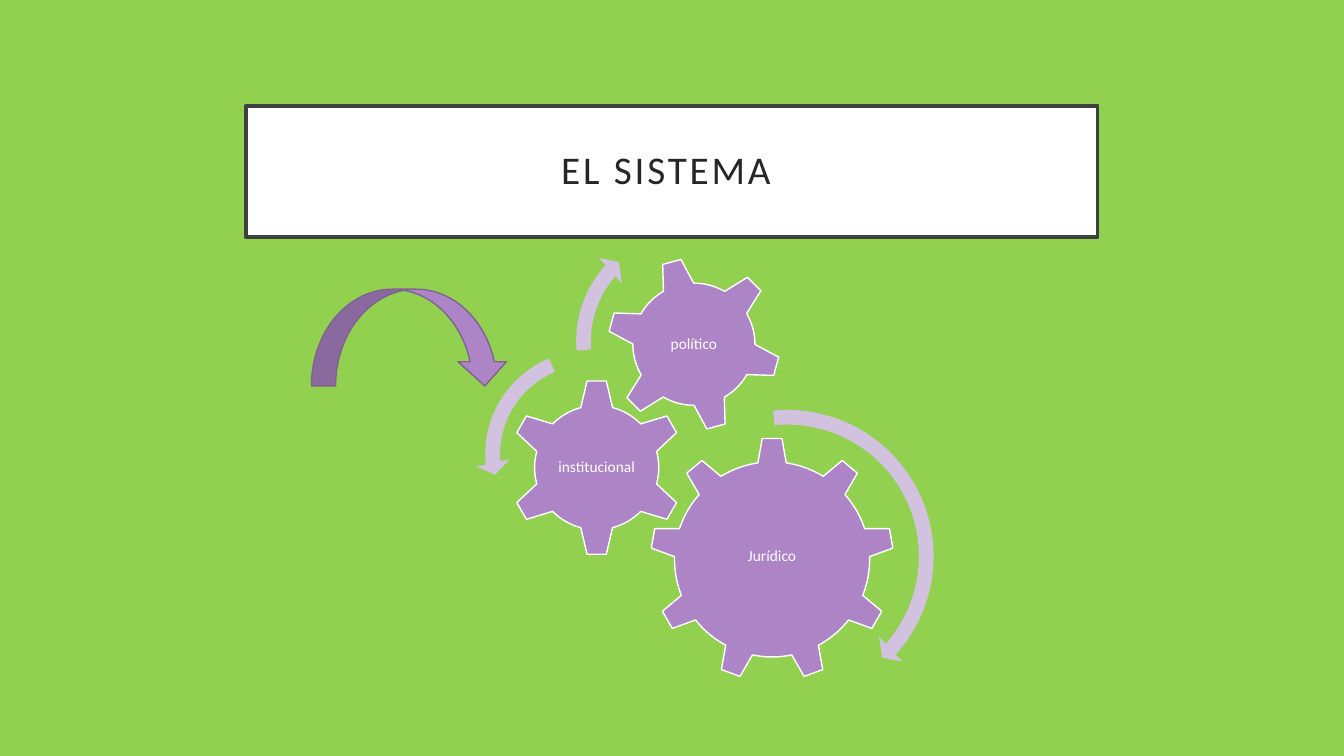
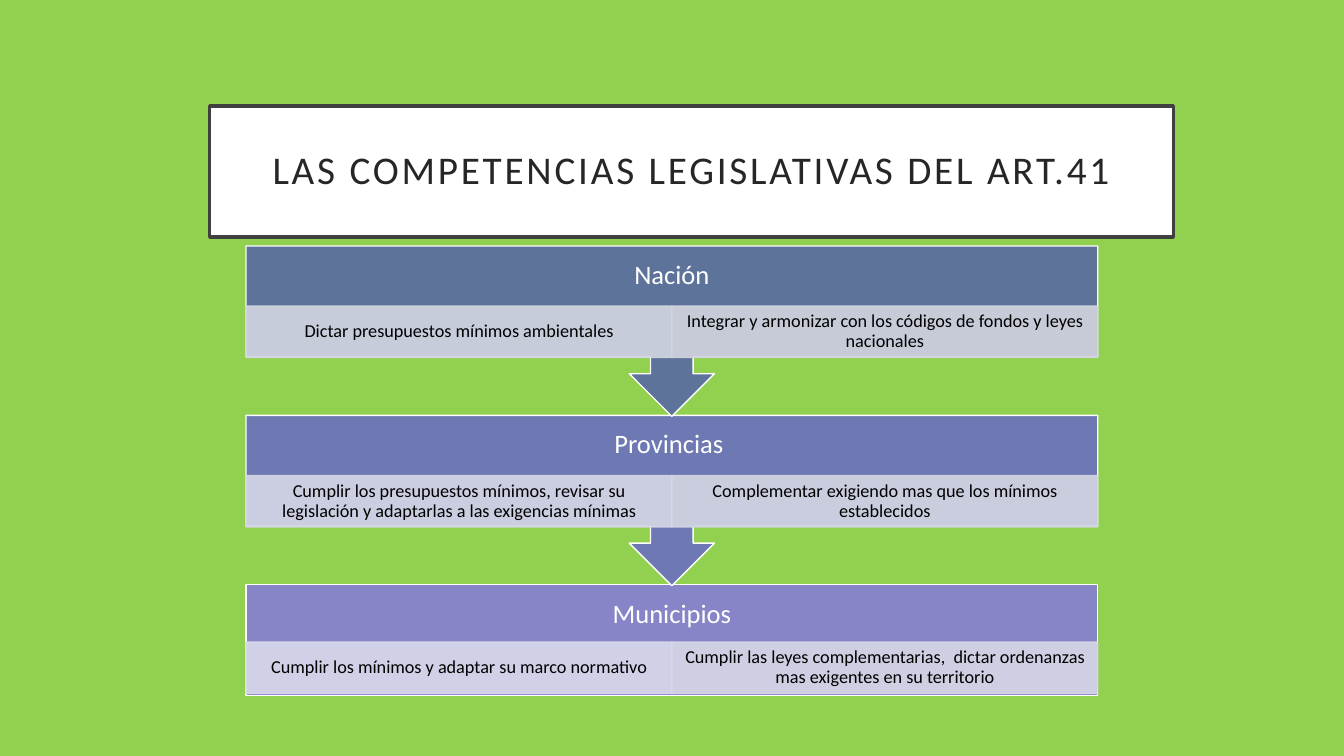
from dataclasses import dataclass
from typing import NamedTuple

from lxml import etree
from pptx import Presentation, util as u
from pptx.dml.color import RGBColor
from pptx.enum import shapes, text
from pptx.oxml.ns import qn

Kind = shapes.MSO_SHAPE


# Theme: colours and type sizes
@dataclass(frozen=True)
class Theme:
    font: str = "Calibri"
    back: str = "92D050"
    white: str = "FFFFFF"
    black: str = "000000"
    frame: str = "404040"
    ink: str = "262626"
    gear: str = "AD84C6"
    turn: str = "D3C2DF"
    edge: str = "806292"
    title: float = 28
    head: float = 19
    body: float = 13
    label: float = 11


T = Theme()


# Repeated elements, lengths in points
class Box(NamedTuple):
    left: float
    top: float
    wide: float
    high: float


class Gear(NamedTuple):
    label: str
    kind: Kind
    left: float
    top: float
    size: float
    turn: float = 0
    lift: float = 0


class Turn(NamedTuple):
    kind: Kind
    left: float
    top: float
    size: float
    bends: tuple[float, ...]


class Cell(NamedTuple):
    words: str
    fill: str


class Level(NamedTuple):
    name: str
    fill: str
    kind: Kind
    high: float
    drop: float
    cells: tuple[Cell, Cell]


GEARS = (
    Gear("Jurídico", Kind.GEAR_9, 464.4, 312.5, 174.2, lift=2),
    Gear("institucional", Kind.GEAR_6, 362.9, 270.7, 126.7),
    Gear("político", Kind.GEAR_6, 433.4, 183.6, 124.6, turn=345),
)
TURNS = (
    Turn(Kind.CIRCULAR_ARROW, 450.7, 285.8, 223.2,
         (0.047, 2.99, 25.122, 158.699, 0.055)),
    Turn(Kind.LEFT_CIRCULAR_ARROW, 339.8, 243.4, 162,
         (0.065, 4.3, 104.891, 148.378, 0.075)),
    Turn(Kind.CIRCULAR_ARROW, 404.6, 156.2, 175,
         (0.06, 3.941, 133.138, 105.082, 0.07)),
)
LEVELS = (
    Level("Nación", "5D739A", Kind.DOWN_ARROW_CALLOUT, 121.7, 43, (
        Cell("Dictar presupuestos mínimos ambientales", "D3D6E1"),
        Cell("Integrar y armonizar con los códigos de fondos y leyes "
             "nacionales", "D2D5DE"))),
    Level("Provincias ", "6E79B3", Kind.DOWN_ARROW_CALLOUT, 121.7, 43, (
        Cell("Cumplir los presupuestos mínimos, revisar su legislación y "
             "adaptarlas a las exigencias mínimas", "D6D7E6"),
        Cell("Complementar exigiendo mas que los mínimos establecidos",
             "D4D7E3"))),
    Level("Municipios", "8784C7", Kind.RECTANGLE, 79.2, 41, (
        Cell("Cumplir los mínimos y adaptar su marco normativo", "D9D9EB"),
        Cell("Cumplir las leyes complementarias,  dictar ordenanzas mas "
             "exigentes en su territorio", "D7D8E8"))),
)
LEFT, TOP, STEP = 175.7, 175.7, 121
WIDE, CELL = 608.4, 36.7


# Shared drawing functions
def rgb(hue: str) -> RGBColor:
    return RGBColor.from_string(hue)


def place(box: Box) -> list[u.Pt]:
    return [u.Pt(side) for side in box]


def draw(slide, kind: Kind, box: Box, fill: str, line: str = "",
         thick: float = 1):
    shape = slide.shapes.add_shape(kind, *place(box))
    shape.shadow.inherit = False
    shape.fill.solid()
    shape.fill.fore_color.rgb = rgb(fill)
    if line:
        shape.line.color.rgb = rgb(line)
        shape.line.width = u.Pt(thick)
    else:
        shape.line.fill.background()
    return shape


def write(shape, words: str, size: float, hue: str,
          pads: tuple[float, float, float, float], space: float = 0) -> None:
    """Set centred text; pads run left, top, right, bottom."""
    frame = shape.text_frame
    frame.text = words
    frame.word_wrap = True
    frame.vertical_anchor = text.MSO_ANCHOR.MIDDLE
    (frame.margin_left, frame.margin_top,
     frame.margin_right, frame.margin_bottom) = map(u.Pt, pads)
    for para in frame.paragraphs:
        para.alignment = text.PP_ALIGN.CENTER
        para.line_spacing = 0.9
        for run in para.runs:
            run.font.name = T.font
            run.font.size = u.Pt(size)
            run.font.color.rgb = rgb(hue)
            if space:
                run.font._element.set("spc", str(int(space * 100)))


def fade(shape, share: int) -> None:
    """Make fill and line opaque to the given percentage."""
    for hue in shape._element.spPr.iter(qn("a:srgbClr")):
        etree.SubElement(hue, qn("a:alpha")).set("val", str(share * 1000))


def start(deck, words: str, left: float, wide: float):
    slide = deck.slides.add_slide(deck.slide_layouts[6])
    slide.background.fill.solid()
    slide.background.fill.fore_color.rgb = rgb(T.back)
    title = draw(slide, Kind.RECTANGLE, Box(left, 75.6, wide, 93.6),
                 T.white, T.frame, 2.5)
    write(title, words, T.title, T.ink, (14.4,) * 4, space=2)
    return slide


# Slide parts
def add_gear(slide, gear: Gear) -> None:
    shape = draw(slide, gear.kind,
                 Box(gear.left, gear.top, gear.size, gear.size),
                 T.gear, T.white)
    shape.rotation = gear.turn
    # Upright label over the middle of the gear
    wide, high = 80, 40
    label = slide.shapes.add_textbox(*place(Box(
        gear.left + (gear.size - wide) / 2,
        gear.top + (gear.size - high) / 2 - gear.lift, wide, high)))
    write(label, gear.label, T.label, T.white, (1.4,) * 4)


def add_turn(slide, turn: Turn) -> None:
    shape = draw(slide, turn.kind,
                 Box(turn.left, turn.top, turn.size, turn.size), T.turn)
    for rank, bend in enumerate(turn.bends):
        shape.adjustments[rank] = bend


def add_level(slide, level: Level, top: float) -> None:
    head = draw(slide, level.kind, Box(LEFT, top, WIDE, level.high),
                level.fill, T.white)
    # The lower pad keeps the heading above the cells
    write(head, level.name, T.head, T.white, (10.8, 10.8, 10.8, 47))
    half = WIDE / 2
    for rank, cell in enumerate(level.cells):
        box = Box(LEFT + rank * half, top + level.drop, half, CELL)
        shape = draw(slide, Kind.RECTANGLE, box, cell.fill, cell.fill)
        fade(shape, 90)
        write(shape, cell.words, T.body, T.black, (7.2, 1.4, 7.2, 1.4))


def main() -> None:
    deck = Presentation()
    deck.slide_width, deck.slide_height = u.Pt(960), u.Pt(540)

    # Slide 1: gears
    slide = start(deck, "EL SISTEMA ", LEFT, WIDE)
    for gear in GEARS:
        add_gear(slide, gear)
    for turn in TURNS:
        add_turn(slide, turn)
    draw(slide, Kind.CURVED_DOWN_ARROW, Box(222.5, 206.6, 141.1, 69.1),
         T.gear, T.edge)

    # Slide 2: levels, lowest first so each arrow tip lies on top
    slide = start(deck, "LAS COMPETENCIAS LEGISLATIVAS DEL ART.41",
                  149.8, 688.3)
    for rank, level in reversed(list(enumerate(LEVELS))):
        add_level(slide, level, TOP + rank * STEP)

    deck.save("out.pptx")


if __name__ == "__main__":
    main()
